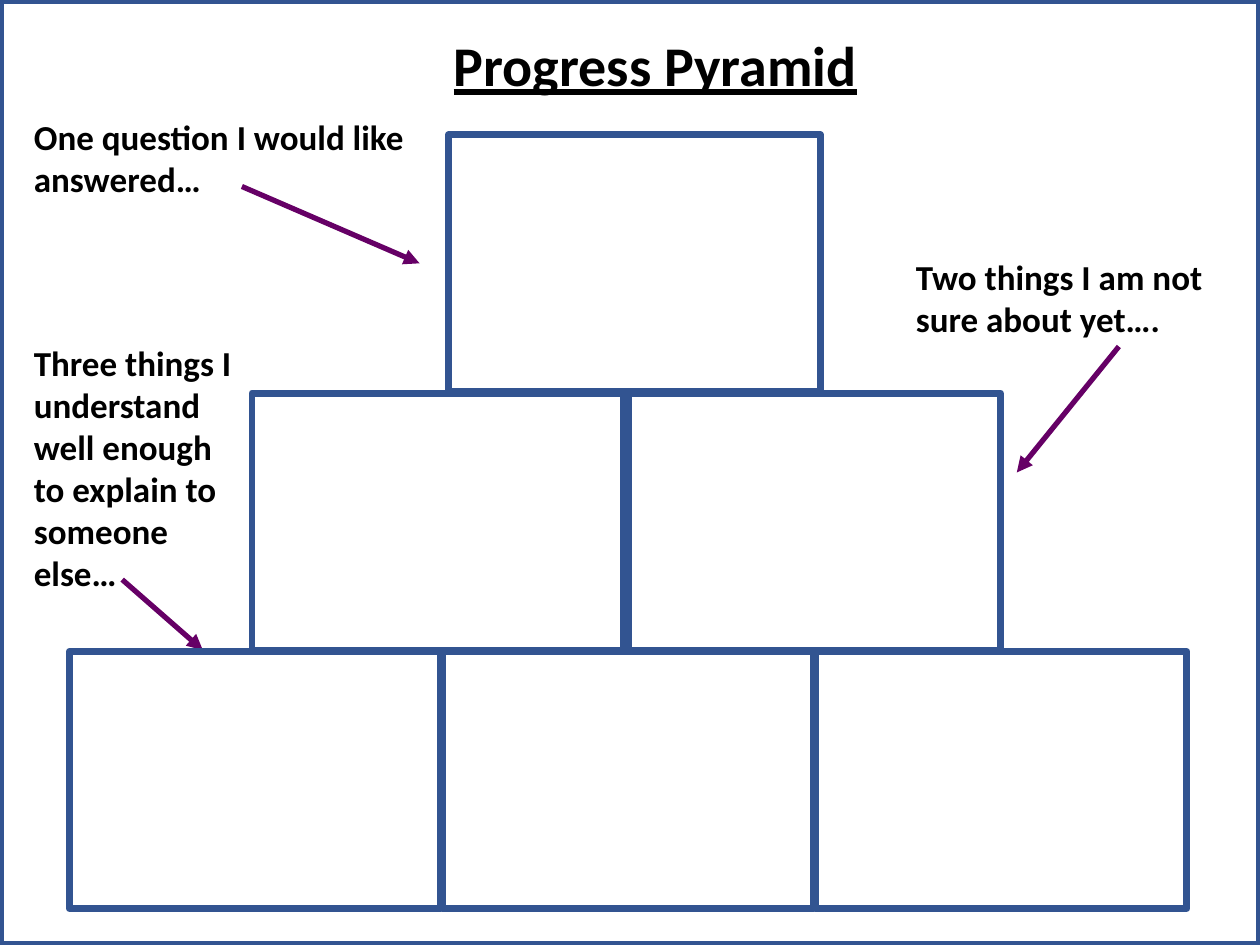
from lxml.etree import SubElement
from pptx import Presentation
from pptx.dml.color import RGBColor
from pptx.enum.shapes import MSO_CONNECTOR, MSO_SHAPE
from pptx.enum.text import MSO_ANCHOR, MSO_AUTO_SIZE, PP_ALIGN
from pptx.oxml.ns import qn
from pptx.util import Inches, Pt

BLUE = RGBColor(0x32, 0x54, 0x91)
PURPLE = RGBColor(0x66, 0x00, 0x66)
BLACK = RGBColor(0x00, 0x00, 0x00)
BLOCK_WIDTH, BLOCK_HEIGHT = 2.95, 2.04
PYRAMID_TOP, ROW_STEP = 1.07, 2.05

deck = Presentation()
deck.slide_width, deck.slide_height = Inches(10), Inches(7.5)
slide = deck.slides.add_slide(deck.slide_layouts[5])


def write(box, words, align, size, underline):
    frame = box.text_frame
    frame.text = words
    layout = {"word_wrap": True, "auto_size": MSO_AUTO_SIZE.NONE,
              "vertical_anchor": MSO_ANCHOR.TOP}
    for key, value in layout.items():
        setattr(frame, key, value)
    frame.paragraphs[0].alignment = align
    font = frame.paragraphs[0].runs[0].font
    style = {"name": "Calibri", "size": Pt(size), "bold": True, "underline": underline}
    for key, value in style.items():
        setattr(font, key, value)
    font.color.rgb = BLACK


def outline(left, top, width, height, weight):
    rect = slide.shapes.add_shape(MSO_SHAPE.RECTANGLE, *map(Inches, (left, top, width, height)))
    rect.shadow.inherit = False
    rect.fill.background()
    rect.line.color.rgb = BLUE
    rect.line.width = Pt(weight)


heading = slide.shapes.title
place = {"left": 2.87, "top": 0.19, "width": 4.66, "height": 0.64}
for side, length in place.items():
    setattr(heading, side, Inches(length))
write(heading, "Progress Pyramid", PP_ALIGN.CENTER, 32, True)

prompts = [
    ("One question I would like answered…", (0.17, 0.87, 3.21, 0.77), (1.92, 1.48, 3.33, 2.09)),
    ("Two things I am not sure about yet….", (7.17, 1.98, 2.64, 0.77), (8.88, 2.75, 8.07, 3.75)),
    ("Three things I understand well enough to explain to someone else…",
     (0.17, 2.66, 1.86, 2.12), (0.97, 4.6, 1.61, 5.16)),
]
for words, area, ends in prompts:
    arrow = slide.shapes.add_connector(MSO_CONNECTOR.STRAIGHT, *map(Inches, ends))
    arrow.line.color.rgb = PURPLE
    arrow.line.width = Pt(3)
    SubElement(arrow.line._get_or_add_ln(), qn("a:tailEnd"), type="triangle")
    SubElement(arrow._element.spPr, qn("a:effectLst"))
    prompt = slide.shapes.add_textbox(*map(Inches, area))
    write(prompt, words, PP_ALIGN.LEFT, 20, False)

pyramid_rows = [(3.56, 0), (2, 2.99), (0.55, 2.96)]
for row, (row_left, block_step) in reversed(list(enumerate(pyramid_rows))):
    for column in range(row + 1):
        outline(row_left + column * block_step, PYRAMID_TOP + row * ROW_STEP,
                BLOCK_WIDTH, BLOCK_HEIGHT, 4)

outline(0, 0, 10, 7.5, 5)

deck.save("out.pptx")
